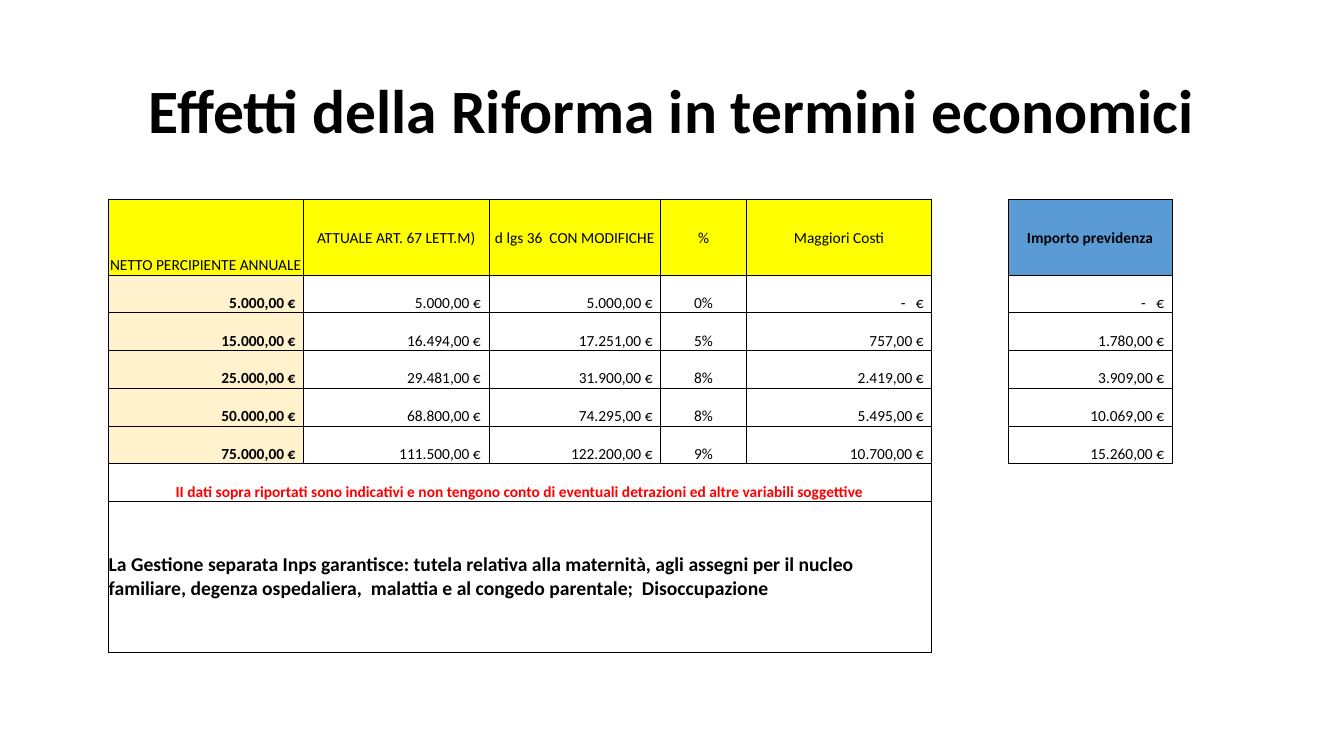
import pptx
import pptx.util
import pptx.dml.color
import pptx.enum.text
import lxml.etree

Cm = pptx.util.Cm
Align = pptx.enum.text.PP_ALIGN
Anchor = pptx.enum.text.MSO_ANCHOR
NO_STYLE = "{2D5ABB26-0587-4C30-8999-92F81FD0307C}"


def color(code):
    return pptx.dml.color.RGBColor.from_string(code)


def write(frame, text, size=11, bold=False, ink="000000", align=Align.CENTER):
    par = frame.paragraphs[0]
    par.alignment = align
    run = par.add_run()
    run.text = text
    run.font.name = "Calibri"
    run.font.size = pptx.util.Pt(size)
    run.font.bold = bold
    run.font.color.rgb = color(ink)
    return par


deck = pptx.Presentation()
deck.slide_width, deck.slide_height = Cm(33.87), Cm(19.05)
slide = deck.slides.add_slide(deck.slide_layouts[5])

# Title
title = slide.shapes.title
title.left, title.top, title.width, title.height = Cm(2.33), Cm(1.01), Cm(29.21), Cm(3.68)
title.text_frame.vertical_anchor = Anchor.MIDDLE
write(title.text_frame, "Effetti della Riforma in termini economici", size=44, bold=True).line_spacing = 0.9

# Table content; the empty column separates the pension amounts
heads = ["NETTO PERCIPIENTE ANNUALE", "ATTUALE ART. 67 LETT.M)", "d lgs 36  CON MODIFICHE",
         "%", "Maggiori Costi", "", "Importo previdenza"]
costs = [
    ["5.000,00 €", "5.000,00 €", "5.000,00 €", "0%", "-   €", "", "-   €"],
    ["15.000,00 €", "16.494,00 €", "17.251,00 €", "5%", "757,00 €", "", "1.780,00 €"],
    ["25.000,00 €", "29.481,00 €", "31.900,00 €", "8%", "2.419,00 €", "", "3.909,00 €"],
    ["50.000,00 €", "68.800,00 €", "74.295,00 €", "8%", "5.495,00 €", "", "10.069,00 €"],
    ["75.000,00 €", "111.500,00 €", "122.200,00 €", "9%", "10.700,00 €", "", "15.260,00 €"],
]
widths = [4.93, 4.67, 4.33, 2.16, 4.67, 1.92, 4.14]
heights = [1.9] + [0.95] * 10
GAP, PENSION, PERCENT = 5, 6, 3
NOTE = len(costs) + 1

table = slide.shapes.add_table(len(heights), len(widths), Cm(2.72), Cm(5.03),
                               Cm(sum(widths)), Cm(sum(heights))).table
table.first_row = table.horz_banding = False
table._tbl.tblPr[0].text = NO_STYLE
for col, width in zip(table.columns, widths):
    col.width = Cm(width)
for row, height in zip(table.rows, heights):
    row.height = Cm(height)

# Borders, margins and fills
for y in range(len(heights)):
    for x in range(len(widths)):
        cell = table.cell(y, x)
        cell.margin_left = cell.margin_right = cell.margin_top = Cm(0.02)
        cell.margin_bottom = 0
        cell.vertical_anchor = Anchor.BOTTOM
        if x < GAP or x == PENSION and y < NOTE:
            for side in "LRTB":
                cell._tc.get_or_add_tcPr().append(lxml.etree.fromstring(
                    f'<a:ln{side} xmlns:a="http://schemas.openxmlformats.org/drawingml/2006/main" w="6350">'
                    f'<a:solidFill><a:srgbClr val="000000"/></a:solidFill></a:ln{side}>'))
        fill = None
        if y == 0 and x != GAP:
            fill = "5B9BD5" if x == PENSION else "FFFF00"
        elif x == 0 and y < NOTE:
            fill = "FFF2CC"
        if fill:
            cell.fill.solid()
            cell.fill.fore_color.rgb = color(fill)
        else:
            cell.fill.background()

# Headings and amounts
for x, head in enumerate(heads):
    if x != GAP:
        cell = table.cell(0, x)
        cell.vertical_anchor = Anchor.MIDDLE if x else Anchor.BOTTOM
        write(cell.text_frame, head, bold=x == PENSION)
for y, line in enumerate(costs, 1):
    for x, text in enumerate(line):
        if x == GAP:
            continue
        cell = table.cell(y, x)
        if x == PERCENT:
            write(cell.text_frame, text)
        else:
            cell.margin_right = Cm(0.2)
            write(cell.text_frame, text, bold=x == 0, align=Align.RIGHT)

# Notes across the first five columns
note = table.cell(NOTE, 0)
note.merge(table.cell(NOTE, GAP - 1))
write(note.text_frame, "II dati sopra riportati sono indicativi e non tengono conto di eventuali "
      "detrazioni ed altre variabili soggettive", bold=True, ink="FF0000")
cover = table.cell(NOTE + 1, 0)
cover.merge(table.cell(len(heights) - 1, GAP - 1))
cover.vertical_anchor = Anchor.MIDDLE
write(cover.text_frame, "La Gestione separata Inps garantisce: tutela relativa alla maternità, agli "
      "assegni per il nucleo familiare, degenza ospedaliera,  malattia e al congedo parentale;  "
      "Disoccupazione", size=14, bold=True, align=Align.LEFT)

deck.save("out.pptx")
